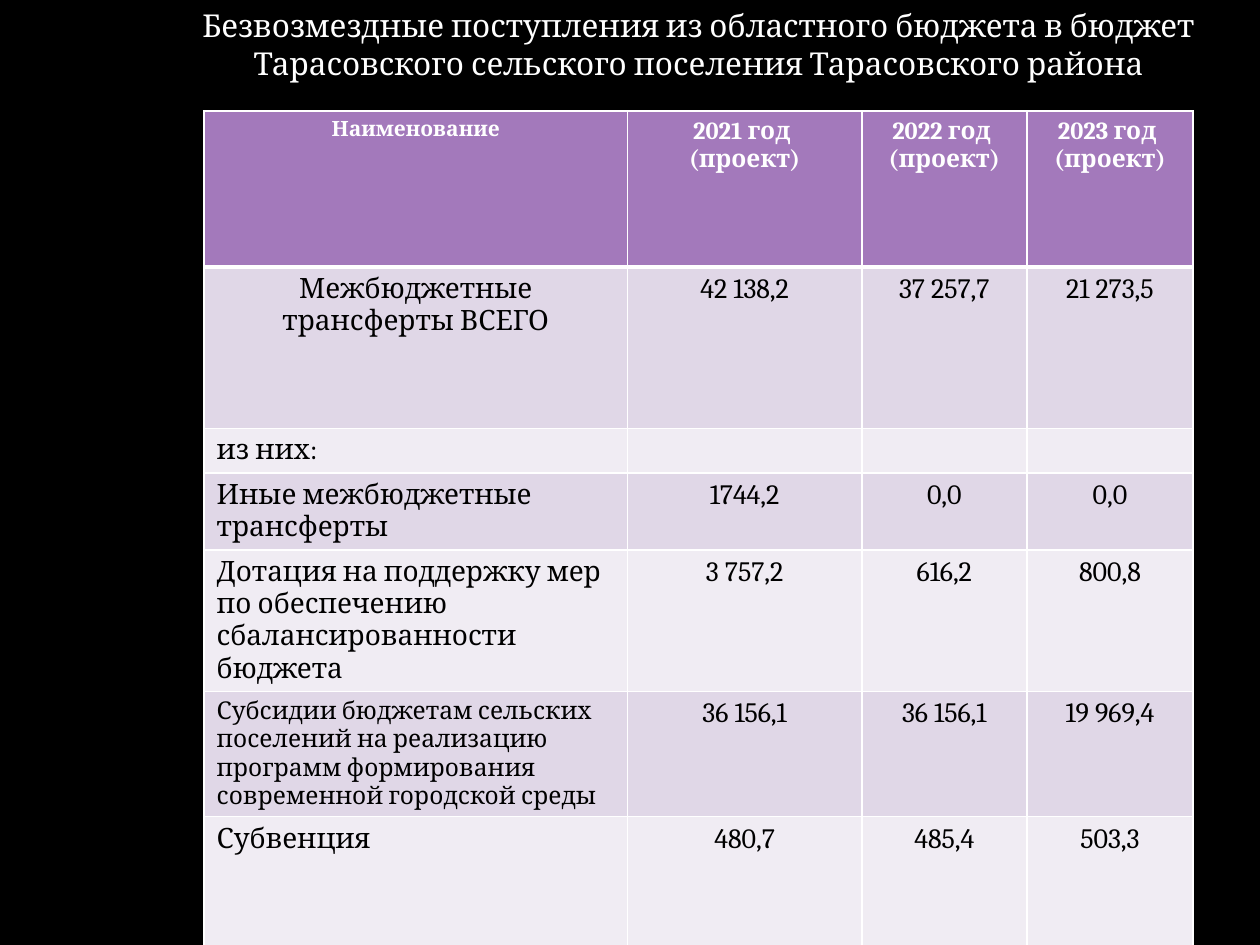
"""Build a slide with a table of budget transfers to a rural settlement."""
from lxml import etree
from pptx import Presentation
from pptx.dml.color import RGBColor
from pptx.enum.text import MSO_ANCHOR, PP_ALIGN
from pptx.oxml.ns import qn
from pptx.util import Inches, Pt

CENTER, LEFT, TOP = PP_ALIGN.CENTER, PP_ALIGN.LEFT, MSO_ANCHOR.TOP
BLACK = RGBColor(0x00, 0x00, 0x00)
WHITE = RGBColor(0xFF, 0xFF, 0xFF)
PURPLE = RGBColor(0xA3, 0x79, 0xBB)
BANDS = [RGBColor(0xF0, 0xEC, 0xF3), RGBColor(0xE0, 0xD7, 0xE7)]
FONT = "Cambria"
TITLE = ("Безвозмездные поступления из областного бюджета в бюджет "
         "Тарасовского сельского поселения Тарасовского района")
COLUMN_WIDTHS = [3.36, 1.86, 1.31, 1.32]
ROW_HEIGHTS = [1.24, 1.28, 0.34, 0.34, 1.07, 0.59, 1.28]
ROWS = [
    ["Наименование", "2021 год \v(проект)", "2022 год \v(проект)", "2023 год \v(проект)"],
    ["Межбюджетные трансферты ВСЕГО", "42 138,2", "37 257,7", "21 273,5"],
    ["из них:", "", "", ""],
    ["Иные межбюджетные трансферты", "1744,2", "0,0", "0,0"],
    ["Дотация на поддержку мер по обеспечению сбалансированности бюджета",
     "3 757,2", "616,2", "800,8"],
    ["Субсидии бюджетам сельских поселений на реализацию программ "
     "формирования современной городской среды", "36 156,1", "36 156,1", "19 969,4"],
    ["Субвенция", "480,7", "485,4", "503,3"],
]
HEADER_SIZES = [12, 14, 14, 14]
SUBSIDY_ROW = 5


def format_paragraph(paragraph, size, color, alignment, bold=False):
    paragraph.alignment = alignment
    paragraph.font.name = FONT
    paragraph.font.size = Pt(size)
    paragraph.font.bold = bold
    paragraph.font.color.rgb = color


def add_borders(cell, widths):
    properties = cell._tc.get_or_add_tcPr()
    for position, (side, width) in enumerate(widths.items()):
        line = etree.Element(qn(f"a:{side}"), w=str(Pt(width)))
        fill = etree.SubElement(line, qn("a:solidFill"))
        etree.SubElement(fill, qn("a:srgbClr"), val=str(WHITE))
        properties.insert(position, line)


presentation = Presentation()
presentation.slide_width, presentation.slide_height = Inches(10), Inches(7.5)
slide = presentation.slides.add_slide(presentation.slide_layouts[5])
slide.background.fill.solid()
slide.background.fill.fore_color.rgb = BLACK

title = slide.shapes.title
title.left, title.top = Inches(1.09), Inches(0)
title.width, title.height = Inches(8.91), Inches(1.01)
title.text_frame.text = TITLE
title.text_frame.word_wrap = True
title.text_frame.vertical_anchor = TOP
format_paragraph(title.text_frame.paragraphs[0], 18, WHITE, CENTER)

table = slide.shapes.add_table(
    len(ROWS), len(COLUMN_WIDTHS), Inches(1.62), Inches(0.88),
    Inches(sum(COLUMN_WIDTHS)), Inches(sum(ROW_HEIGHTS))).table
for column, width in zip(table.columns, COLUMN_WIDTHS):
    column.width = Inches(width)
for row, height in zip(table.rows, ROW_HEIGHTS):
    row.height = Inches(height)

for row_index, texts in enumerate(ROWS):
    header = row_index == 0
    for column_index, text in enumerate(texts):
        cell = table.cell(row_index, column_index)
        paragraph = cell.text_frame.paragraphs[0]
        paragraph.text = text
        if header:
            size = HEADER_SIZES[column_index]
        else:
            size = 14 if row_index == SUBSIDY_ROW and column_index == 0 else 16
        alignment = LEFT if row_index > 1 and column_index == 0 else CENTER
        format_paragraph(paragraph, size, WHITE if header else BLACK, alignment, header)
        cell.fill.solid()
        cell.fill.fore_color.rgb = PURPLE if header else BANDS[row_index % 2]
        add_borders(cell, {"lnL": 1, "lnR": 1, "lnT": 3 if row_index == 1 else 1,
                           "lnB": 3 if header else 1})

presentation.save("out.pptx")
